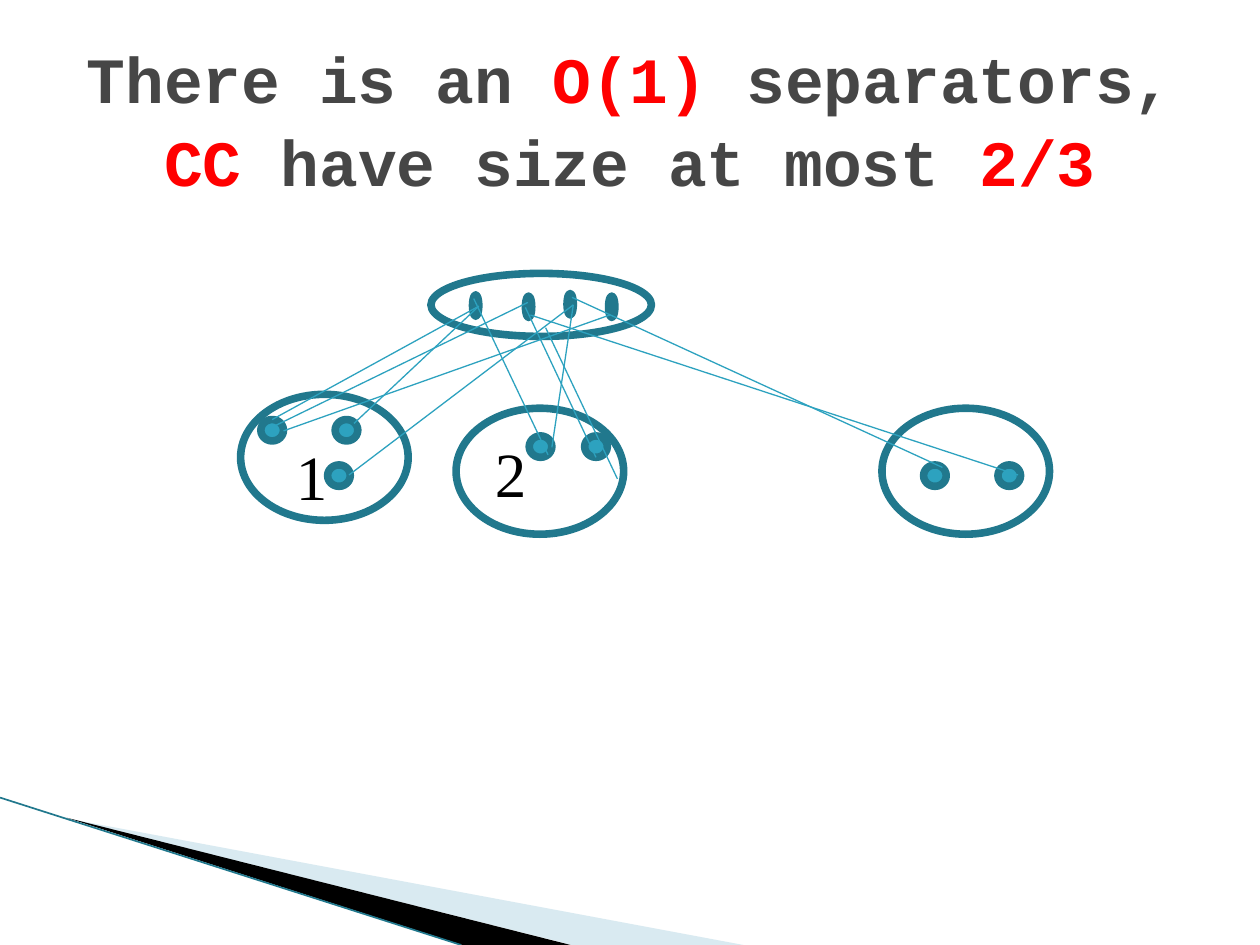
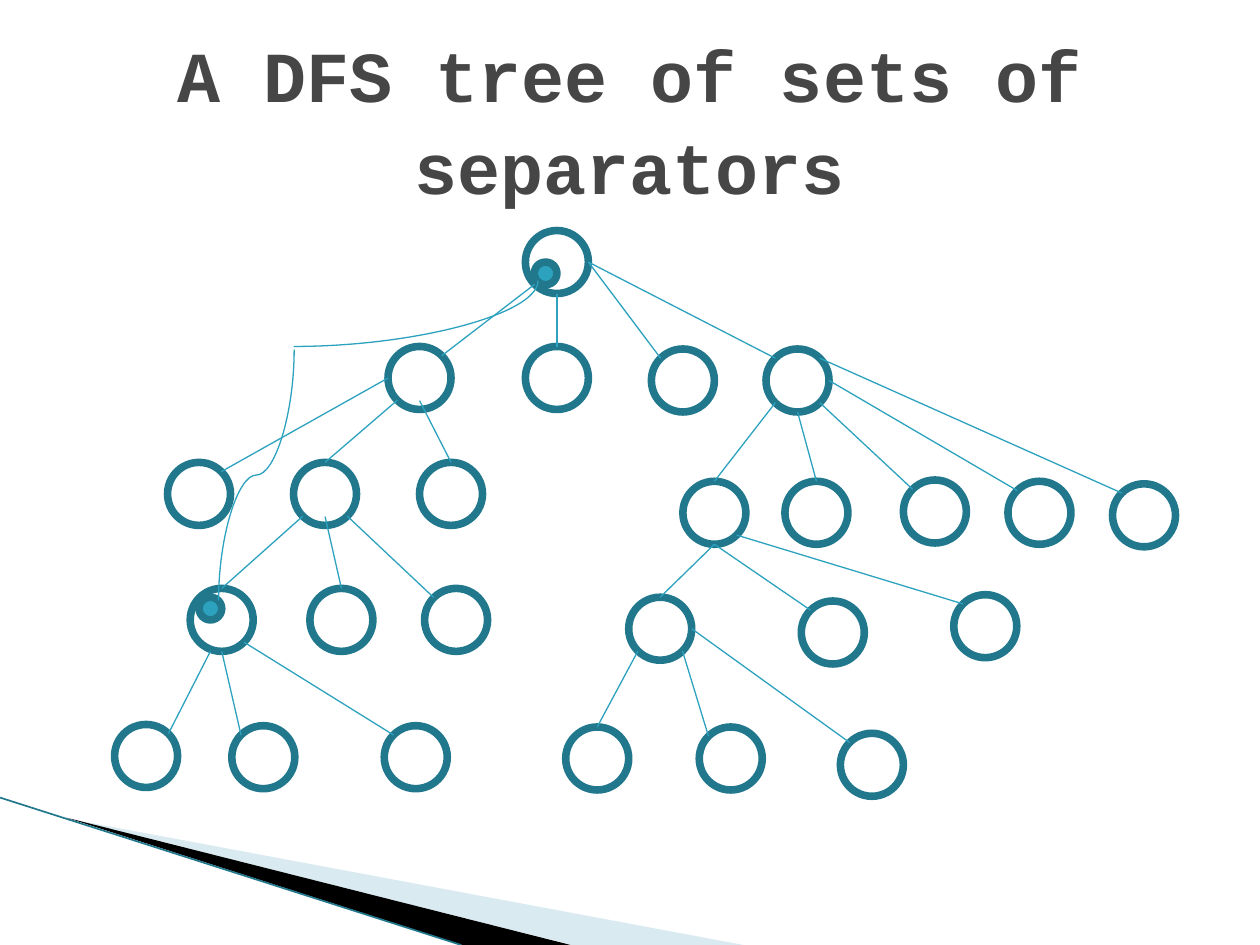
from dataclasses import dataclass
from math import cos, pi, sin

from lxml.etree import SubElement
from pptx import Presentation
from pptx.dml.color import RGBColor as RGB
from pptx.enum.shapes import MSO_CONNECTOR as CONN, MSO_SHAPE as SHAPE
from pptx.enum.text import MSO_ANCHOR as ANCHOR, MSO_AUTO_SIZE as AUTO, PP_ALIGN as ALIGN
from pptx.oxml.ns import qn
from pptx.util import Inches, Pt

# The slide is a grid of 10 columns by 7.5 rows of square cells
COLS, ROWS = 10, 7.5
CELL = Inches(1)


@dataclass(frozen=True)
class Theme:
    title: RGB = RGB(0x46, 0x46, 0x46)
    accent: RGB = RGB(0xFF, 0x00, 0x00)
    label: RGB = RGB(0x00, 0x00, 0x00)
    fill: RGB = RGB(0x2D, 0xA2, 0xBF)
    outline: RGB = RGB(0x21, 0x78, 0x8D)
    pale: RGB = RGB(0xA0, 0xCB, 0xDC)
    black: RGB = RGB(0x00, 0x00, 0x00)
    title_font: str = "Courier New"
    label_font: str = "Times New Roman"
    label_size: float = 36
    outline_width: float = 4.33
    edge_width: float = 0.75
    band_width: float = 0.95


T = Theme()


@dataclass(frozen=True)
class Box:
    """A region of the slide; positions inside it are counted in cells."""
    left: float
    top: float

    def at(self, x, y):
        return int((self.left + x) * CELL), int((self.top + y) * CELL)


PAGE = Box(0, 0)


def cells(*lengths):
    return [int(n * CELL) for n in lengths]


# Shared drawing parts
def add_ellipse(s, box, x, y, w, h, filled=False):
    sp = s.shapes.add_shape(SHAPE.OVAL, *box.at(x, y), *cells(w, h))
    sp.shadow.inherit = False
    if filled:
        sp.fill.solid()
        sp.fill.fore_color.rgb = T.fill
    else:
        sp.fill.background()
    sp.line.color.rgb = T.outline
    sp.line.width = Pt(T.outline_width)


def add_line(s, box, start, end, color=T.fill, width=T.edge_width, kind=CONN.STRAIGHT):
    line = s.shapes.add_connector(kind, *box.at(*start), *box.at(*end))
    line.line.color.rgb = color
    line.line.width = Pt(width)
    SubElement(line.element.spPr, qn("a:effectLst"))
    return line


def add_curve(s, box, start, end, preset, turn=0):
    """Draw a curved connector, then turn it about its centre by some degrees."""
    spPr = add_line(s, box, start, end, kind=CONN.CURVE).element.spPr
    spPr.find(qn("a:prstGeom")).set("prst", preset)
    if turn:
        spPr.find(qn("a:xfrm")).set("rot", str(turn * 60000))


def add_wedge(s, points, color, alpha=None):
    corners = [PAGE.at(x, y) for x, y in points]
    builder = s.shapes.build_freeform(*corners[0])
    builder.add_line_segments(corners[1:], close=True)
    sp = builder.convert_to_shape()
    sp.shadow.inherit = False
    sp.fill.solid()
    sp.fill.fore_color.rgb = color
    sp.line.fill.background()
    if alpha is not None:
        clr = sp.element.spPr.find(qn("a:solidFill"))[0]
        SubElement(clr, qn("a:alpha")).set("val", str(alpha * 1000))


def add_corner_bands(s):
    add_wedge(s, [(0.55, 6.5), (5.9, ROWS), (4.54, ROWS)], T.pale, alpha=40)
    add_wedge(s, [(0.53, 6.49), (4.53, ROWS), (3.67, ROWS)], T.black)
    add_line(s, PAGE, (0, 6.33), (3.66, ROWS), T.outline, T.band_width)


def add_title(s, runs, size):
    sp = s.shapes.title
    sp.left, sp.top = PAGE.at(0.5, 0.3)
    sp.width, sp.height = cells(COLS - 1, 1.25)
    tf = sp.text_frame
    tf.word_wrap = True
    tf.auto_size = AUTO.NONE
    tf.vertical_anchor = ANCHOR.MIDDLE
    p = tf.paragraphs[0]
    p.alignment = ALIGN.CENTER
    p.line_spacing = 1.07
    p.font.name = T.title_font
    p.font.size = Pt(size)
    p.font.bold = True
    for text, color in runs:
        r = p.add_run()
        r.text = text
        r.font.color.rgb = color


def new_slide(prs, runs, size):
    s = prs.slides.add_slide(prs.slide_layouts[5])
    add_corner_bands(s)
    add_title(s, runs, size)
    return s


# Separator set joined to the components
SEPARATOR_VERTICES = [(1.85, 0.24), (2.27, 0.25), (2.6, 0.23), (2.93, 0.25)]
COMPONENTS = [(0.01, 1.03), (1.72, 1.14), (5.1, 1.14)]
COMPONENT_VERTICES = [(0.76, 1.23), (0.17, 1.23), (0.7, 1.59), (2.3, 1.36),
                      (2.74, 1.36), (5.43, 1.59), (6.02, 1.59)]
COMPONENT_LABELS = [("1", 0.35, 1.32, 0.58), ("2", 1.93, 1.3, 0.92)]
SEPARATOR_EDGES = [
    ((0.26, 1.23), (1.9, 0.33)), ((0.91, 1.26), (1.9, 0.33)),
    ((0.24, 1.3), (2.29, 0.3)), ((0.87, 1.67), (2.65, 0.32)),
    ((2.94, 0.4), (0.35, 1.32)), ((1.86, 0.27), (2.45, 1.51)),
    ((2.65, 0.32), (2.48, 1.45)), ((2.27, 0.34), (2.83, 1.53)),
    ((2.43, 0.5), (3, 1.7)), ((2.64, 0.26), (5.58, 1.61)),
    ((2.31, 0.4), (6.18, 1.67)),
]


def add_component_label(s, box, text, x, y, w):
    tf = s.shapes.add_textbox(*box.at(x, y), *cells(w, 0.71)).text_frame
    tf.word_wrap = True
    p = tf.paragraphs[0]
    p.text = text
    p.font.name = T.label_font
    p.font.size = Pt(T.label_size)
    p.font.color.rgb = T.label


def add_separator_graph(s, box):
    add_ellipse(s, box, 1.52, 0.07, 1.75, 0.5)
    for x, y in SEPARATOR_VERTICES:
        add_ellipse(s, box, x, y, 0.05, 0.17, filled=True)
    for x, y in COMPONENTS:
        add_ellipse(s, box, x, y, 1.33, 1)
    for label in COMPONENT_LABELS:
        add_component_label(s, box, *label)
    for x, y in COMPONENT_VERTICES:
        add_ellipse(s, box, x, y, 0.18, 0.17, filled=True)
    for start, end in SEPARATOR_EDGES:
        add_line(s, box, start, end)


# Tree of separator sets
NODE = 0.5
DOT = 0.18
RIM = ["E", "SE", "S", "SW", "W", "NW", "N", "NE"]
SITES = {name: (NODE / 2 * cos(i * pi / 4), NODE / 2 * sin(i * pi / 4))
         for i, name in enumerate(RIM)}
SITES |= {"inner S": (0, 0.18), "SSW": (-0.09, 0.25)}

# name: (left, top, parent, site on the parent, site on the node)
TREE = {
    "root": (3.27, 0.03, None, None, None),
    "a": (2.18, 0.95, "root", "SW", "NE"),
    "b": (3.27, 0.95, "root", "S", "N"),
    "c": (4.27, 0.97, "root", "E", "NW"),
    "d": (5.18, 0.97, "root", "E", "NW"),
    "a1": (0.43, 1.87, "a", "W", "NE"),
    "a2": (1.43, 1.87, "a", "SW", "N"),
    "a3": (2.43, 1.87, "a", "inner S", "N"),
    "d1": (4.52, 2.02, "d", "SW", "N"),
    "d2": (5.33, 2.02, "d", "S", "N"),
    "d3": (6.27, 2.01, "d", "SE", "NW"),
    "d4": (7.1, 2.02, "d", "E", "NW"),
    "d5": (7.93, 2.04, "d", "NE", "NW"),
    "a21": (0.61, 2.87, "a2", "SW", "N"),
    "a22": (1.56, 2.87, "a2", "inner S", "N"),
    "a23": (2.47, 2.87, "a2", "SE", "NW"),
    "d11": (4.09, 2.94, "d1", "S", "N"),
    "d12": (5.46, 2.97, "d1", "S", "NW"),
    "d13": (6.67, 2.92, "d1", "SE", "NW"),
    "a211": (0.01, 3.95, "a21", "SSW", "NE"),
    "a212": (0.94, 3.96, "a21", "S", "NW"),
    "a213": (2.15, 3.96, "a21", "SE", "NW"),
    "d111": (3.59, 3.97, "d11", "SW", "N"),
    "d112": (4.65, 3.97, "d11", "SE", "NW"),
    "d113": (5.77, 4.02, "d11", "E", "NW"),
}


def site_point(node, site):
    x, y = TREE[node][:2]
    dx, dy = SITES[site]
    return x + NODE / 2 + dx, y + NODE / 2 + dy


def add_separator_tree(s, box):
    for name, (x, y, parent, parent_site, own_site) in TREE.items():
        add_ellipse(s, box, x, y, NODE, NODE)
        if parent:
            add_line(s, box, site_point(parent, parent_site), site_point(name, own_site))
    # Back edge between two marked vertices
    for x, y in [(0.68, 2.94), (3.34, 0.28)]:
        add_ellipse(s, box, x, y, DOT, DOT, filled=True)
    add_curve(s, box, (2.13, 2.27), (0.14, 1.67), "curvedConnector3", turn=90)
    add_curve(s, box, (1.43, 0.95), (3.37, 0.43), "curvedConnector2")


def main():
    prs = Presentation()
    prs.slide_width, prs.slide_height = cells(COLS, ROWS)

    s = new_slide(prs, [("There is an ", T.title), ("O(1)", T.accent),
                        (" separators, ", T.title), ("CC", T.accent),
                        (" have size at most ", T.title), ("2/3", T.accent)], 36.9)
    add_separator_graph(s, Box(1.9, 2.1))

    s = new_slide(prs, [("A DFS tree of sets of separators", T.title)], 41)
    add_separator_tree(s, Box(0.9, 1.8))

    prs.save("out.pptx")


if __name__ == "__main__":
    main()
